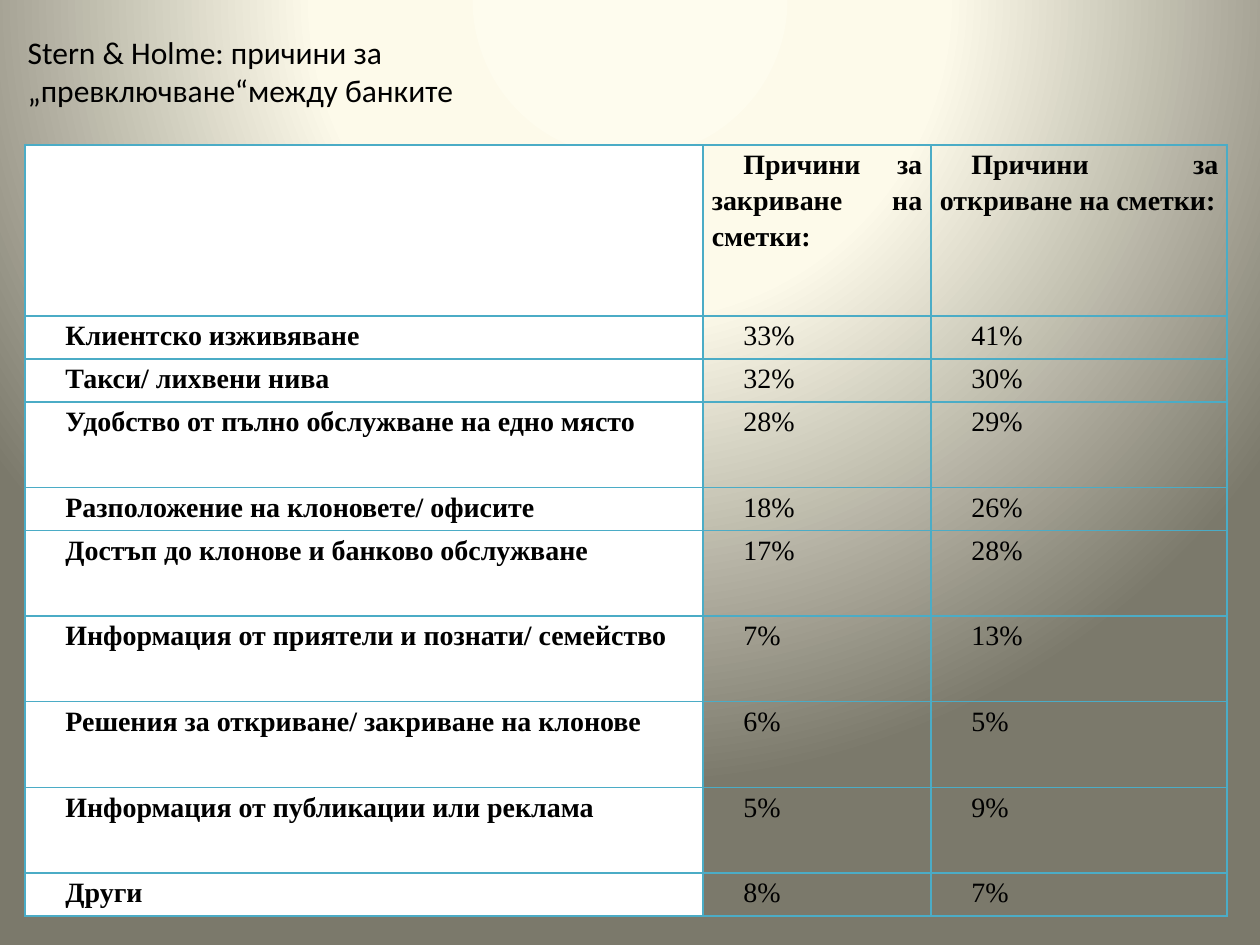
from pptx import Presentation
from pptx.dml.color import RGBColor
from pptx.enum.text import MSO_ANCHOR, MSO_AUTO_SIZE, PP_ALIGN
from pptx.oxml import parse_xml
from pptx.oxml.ns import nsdecls
from pptx.util import Inches, Pt

COLORS = {"ink": "000000", "white": "FFFFFF", "border": "4BACC6",
          "cream": "FEFCEE", "ivory": "FDFAEA", "olive": "7B796B"}

HEADERS = ["", "Причини за закриване на сметки:", "Причини за откриване на сметки:"]
REASONS = [  # reason, closing share, opening share, height in lines
    ("Клиентско изживяване", 33, 41, 1),
    ("Такси/ лихвени нива", 32, 30, 1),
    ("Удобство от пълно обслужване на едно място", 28, 29, 2),
    ("Разположение на клоновете/ офисите", 18, 26, 1),
    ("Достъп до клонове и банково обслужване", 17, 28, 2),
    ("Информация от приятели и познати/ семейство", 7, 13, 2),
    ("Решения за откриване/ закриване на клонове", 6, 5, 2),
    ("Информация от публикации или реклама", 5, 9, 2),
    ("Други", 8, 7, 1),
]
COL_WIDTHS = [5.38, 1.81, 2.35]
LINE_HEIGHT = 0.34
HEADER_LINES = 4


def write(tf, text, font="Calibri", size=18, bold=False,
          align=PP_ALIGN.LEFT, spacing=1.0, indent=0):
    p = tf.paragraphs[0]
    p.alignment, p.line_spacing = align, spacing
    if indent:
        p._p.get_or_add_pPr().set("indent", str(Inches(indent)))
    r = p.add_run()
    r.text = text
    r.font.name, r.font.size, r.font.bold = font, Pt(size), bold
    r.font.color.rgb = RGBColor.from_string(COLORS["ink"])


class SlideBuilder:
    def __init__(self, prs):
        self.s = prs.slides.add_slide(prs.slide_layouts[5])
        self.cell_style = dict(font="Times New Roman", size=16, indent=0.25,
                               align=PP_ALIGN.JUSTIFY, spacing=1.15)

    def background(self, stops):
        gs = "".join(f'<a:gs pos="{pos * 1000}"><a:srgbClr val="{COLORS[name]}"/></a:gs>'
                     for pos, name in stops)
        bg = parse_xml(
            f'<p:bg {nsdecls("p", "a")}><p:bgPr><a:gradFill><a:gsLst>{gs}</a:gsLst>'
            '<a:path path="circle"><a:fillToRect l="50000" t="-80000" r="50000" b="180000"/>'
            '</a:path></a:gradFill><a:effectLst/></p:bgPr></p:bg>')
        self.s._element.cSld.insert(0, bg)

    def title(self, text, left, top, width, height):
        sp = self.s.shapes.title
        sp.left, sp.top, sp.width, sp.height = map(Inches, (left, top, width, height))
        tf = sp.text_frame
        tf.word_wrap = True
        tf.auto_size = MSO_AUTO_SIZE.SHAPE_TO_FIT_TEXT
        tf.vertical_anchor = MSO_ANCHOR.TOP
        write(tf, text)

    def table(self, rows, widths, heights, left, top):
        frame = self.s.shapes.add_table(
            len(rows), len(widths), Inches(left), Inches(top),
            Inches(sum(widths)), Inches(sum(heights)))
        tbl = frame.table
        tbl.first_row = tbl.horz_banding = False
        for col, width in zip(tbl.columns, widths):
            col.width = Inches(width)
        for row, height, texts in zip(tbl.rows, heights, rows):
            row.height = Inches(height)
            for j, (cell, text) in enumerate(zip(row.cells, texts)):
                bold = j == 0 or texts is rows[0]
                self.cell(cell, text, bold, "white" if j == 0 else None)

    def cell(self, cell, text, bold, fill):
        cell.margin_left = cell.margin_right = Inches(0.07)
        cell.margin_top = cell.margin_bottom = 0
        tcPr = cell._tc.get_or_add_tcPr()
        for side in "LRTB":
            tcPr.append(parse_xml(
                f'<a:ln{side} {nsdecls("a")} w="{Pt(1)}"><a:solidFill>'
                f'<a:srgbClr val="{COLORS["border"]}"/></a:solidFill></a:ln{side}>'))
        if fill:
            cell.fill.solid()
            cell.fill.fore_color.rgb = RGBColor.from_string(COLORS[fill])
        else:
            cell.fill.background()
        if text:
            write(cell.text_frame, text, bold=bold, **self.cell_style)


def main():
    prs = Presentation()
    prs.slide_width, prs.slide_height = Inches(10), Inches(7.5)
    slide = SlideBuilder(prs)

    # Radial backdrop
    slide.background([(0, "cream"), (40, "ivory"), (100, "olive")])

    # Reasons table
    rows = [HEADERS] + [[reason, f"{closing}%", f"{opening}%"]
                        for reason, closing, opening, _ in REASONS]
    lines = [HEADER_LINES] + [reason[-1] for reason in REASONS]
    slide.table(rows, COL_WIDTHS, [n * LINE_HEIGHT for n in lines], 0.2, 1.15)

    # Heading
    slide.title("Stern & Holme: причини за „превключване“между банките",
                0.12, 0.21, 5, 0.71)
    prs.save("out.pptx")


if __name__ == "__main__":
    main()
